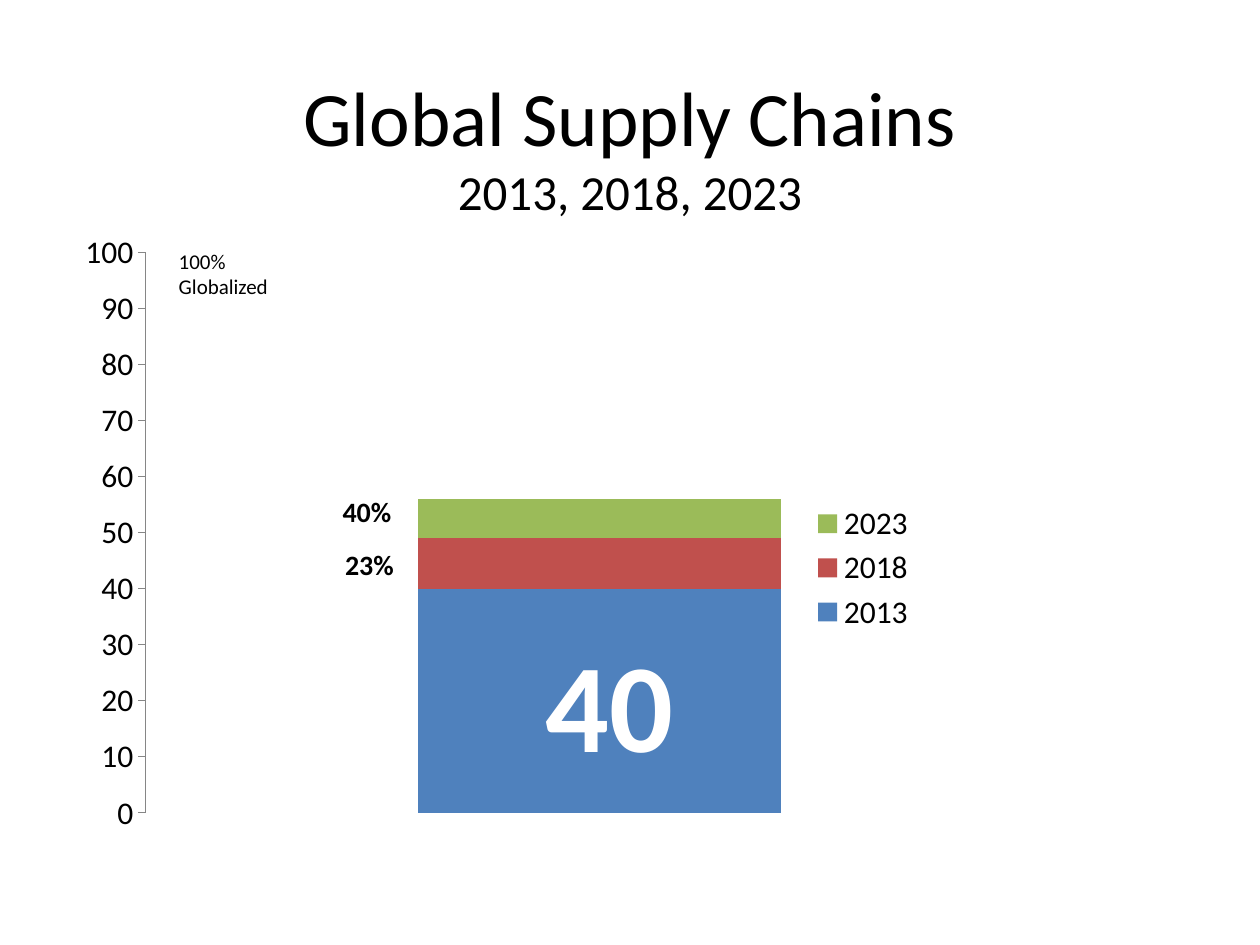
from lxml import etree
from pptx import Presentation
from pptx.chart.data import CategoryChartData
from pptx.dml.color import RGBColor
from pptx.enum.chart import XL_CHART_TYPE, XL_LEGEND_POSITION, XL_TICK_MARK
from pptx.enum.text import MSO_ANCHOR, MSO_AUTO_SIZE, PP_ALIGN
from pptx.oxml.ns import qn
from pptx.util import Inches, Pt

STACKED = XL_CHART_TYPE.COLUMN_STACKED
RIGHT = XL_LEGEND_POSITION.RIGHT
OUTSIDE = XL_TICK_MARK.OUTSIDE
MIDDLE = MSO_ANCHOR.MIDDLE
GROW = MSO_AUTO_SIZE.SHAPE_TO_FIT_TEXT
LEFT, CENTER = PP_ALIGN.LEFT, PP_ALIGN.CENTER

THEME = {
    "font": "Calibri", "ink": "000000", "white": "FFFFFF", "axis": "868686",
    "title": 44, "subtitle": 28, "chart": 18, "growth": 16, "share": 72, "note": 12,
}
TITLE = [("Global Supply Chains", "title"), ("2013, 2018, 2023", "subtitle")]
TITLE_AREA = (0.5, 0.34, 9, 1.62)
CHART_AREA = (0.5, 1.75, 9, 4.95)
PLOT_AREA = (1.16, 2.0, 7.2, 4.45)
LEGEND_AREA = (6.35, 3.96, 1, 1.1)
SERIES = [("2013", 40, "4F81BD"), ("2018", 9, "C0504D"), ("2023", 7, "9BBB59")]
LABELS = [
    (["23%"], (2.64, 4.3, 0.59, 0.37), {"size": "growth", "bold": True}),
    (["40%"], (2.62, 3.88, 0.59, 0.37), {"size": "growth", "bold": True}),
    (["40"], (4, 4.92, 1.67, 1.31),
     {"size": "share", "bold": True, "color": "white", "align": CENTER, "wrap": True}),
    (["100%", "Globalized"], (1.32, 1.92, 0.92, 0.5), {"size": "note"}),
]


def inches(area):
    return [Inches(length) for length in area]


def format_font(font, size, color="ink", bold=False):
    font.name = THEME["font"]
    font.size = Pt(THEME[size])
    font.bold = bold
    font.color.rgb = RGBColor.from_string(THEME[color])


def add_label(page, lines, area, size, color="ink", bold=False, align=LEFT, wrap=False):
    frame = page.shapes.add_textbox(*inches(area)).text_frame
    frame.word_wrap = wrap
    frame.auto_size = GROW
    for index, line in enumerate(lines):
        para = frame.add_paragraph() if index else frame.paragraphs[0]
        para.alignment = align
        span = para.add_run()
        span.text = line
        format_font(span.font, size, color, bold)


def fill_title(box):
    box.left, box.top, box.width, box.height = inches(TITLE_AREA)
    box.text_frame.vertical_anchor = MIDDLE
    para = box.text_frame.paragraphs[0]
    para.alignment = CENTER
    for index, (text, size) in enumerate(TITLE):
        if index:
            para.add_line_break()
        span = para.add_run()
        span.text = text
        format_font(span.font, size)


def make_layout(area, inner=False):
    left, top, width, height = CHART_AREA
    fractions = {
        "x": (area[0] - left) / width, "y": (area[1] - top) / height,
        "w": area[2] / width, "h": area[3] / height,
    }
    layout = etree.Element(qn("c:layout"))
    manual = etree.SubElement(layout, qn("c:manualLayout"))
    if inner:
        etree.SubElement(manual, qn("c:layoutTarget")).set("val", "inner")
    for side in ("x", "y"):
        etree.SubElement(manual, qn(f"c:{side}Mode")).set("val", "edge")
    for side, fraction in fractions.items():
        etree.SubElement(manual, qn(f"c:{side}")).set("val", f"{fraction:.3f}")
    return layout


def add_supply_chart(page):
    data = CategoryChartData()
    data.categories = ["1"]
    for name, value, _ in SERIES:
        data.add_series(name, [value])
    chart = page.shapes.add_chart(STACKED, *inches(CHART_AREA), data).chart
    format_font(chart.font, "chart")
    chart.has_title = False

    plot = chart.plots[0]
    plot.gap_width, plot.overlap, plot.vary_by_categories = 150, 100, False
    for series, (_, _, color) in zip(plot.series, SERIES):
        series.format.fill.solid()
        series.format.fill.fore_color.rgb = RGBColor.from_string(color)

    chart.category_axis.visible = False
    axis = chart.value_axis
    axis.minimum_scale, axis.maximum_scale, axis.major_unit = 0, 100, 10
    axis.has_major_gridlines = False
    axis.major_tick_mark = OUTSIDE
    axis.format.line.color.rgb = RGBColor.from_string(THEME["axis"])

    chart.has_legend = True
    legend = chart.legend
    legend.position = RIGHT
    legend.include_in_layout = False
    legend._element.find(qn("c:overlay")).addprevious(make_layout(LEGEND_AREA))
    plot_area = chart._chartSpace.chart.plotArea
    for layout in plot_area.findall(qn("c:layout")):
        plot_area.remove(layout)
    plot_area.insert(0, make_layout(PLOT_AREA, inner=True))


def main():
    deck = Presentation()
    deck.slide_width, deck.slide_height = Inches(10), Inches(7.5)
    page = deck.slides.add_slide(deck.slide_layouts[5])
    fill_title(page.shapes.title)
    add_supply_chart(page)
    for lines, area, style in LABELS:
        add_label(page, lines, area, **style)
    deck.save("out.pptx")


if __name__ == "__main__":
    main()
